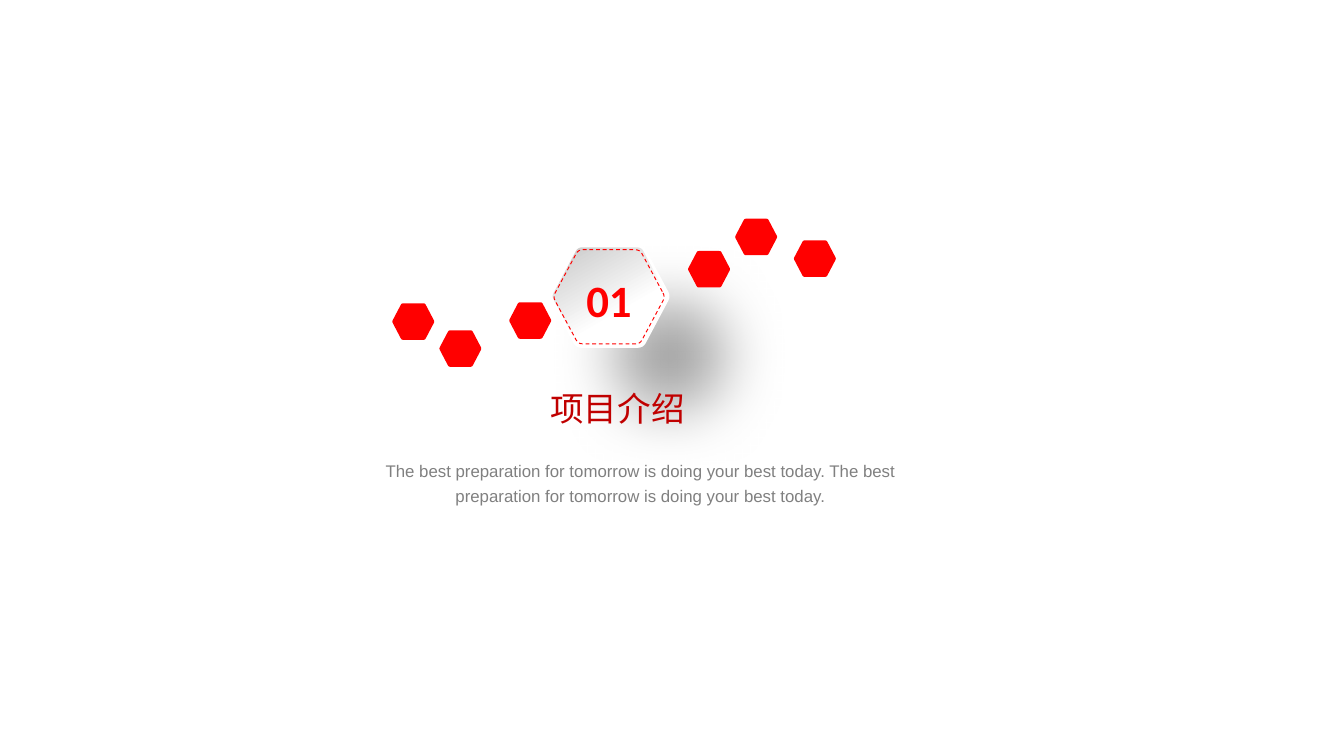
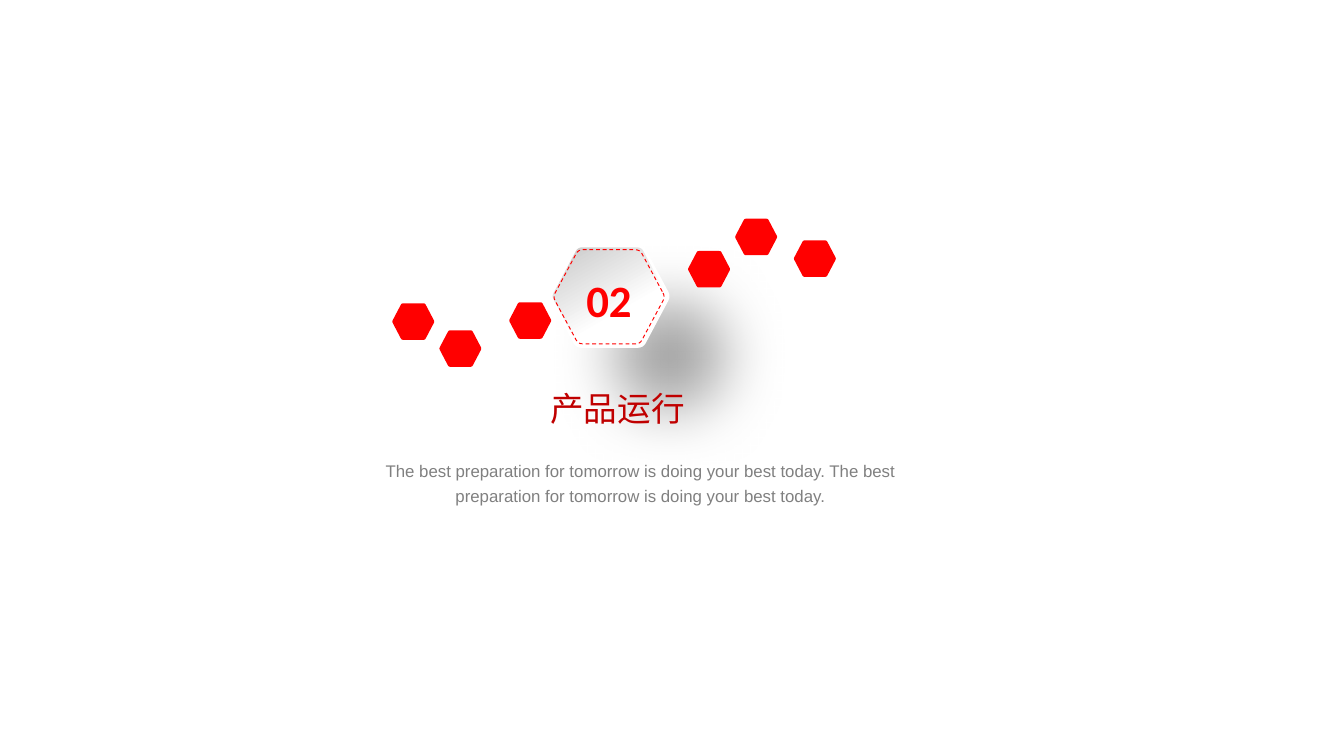
import pptx
import pptx.dml.color
import pptx.enum.dml
import pptx.enum.text
import pptx.util
from lxml import etree
from pptx.oxml.ns import qn

Cm, Pt = pptx.util.Cm, pptx.util.Pt

SECTIONS = [("01", "项目介绍"), ("02", "产品运行")]
MOTTO = " ".join(["The best preparation for tomorrow is doing your best today."] * 2)

COLORS = {"accent": "FF0000", "title": "C00000", "motto": "808080",
          "white": "FFFFFF", "silver": "C7C7C7", "shadow": "A6A6A6"}

# Centres, then sizes before rotation, in cm
DOT_CENTERS = [(7.81, 6.08), (8.7, 6.59), (10.02, 6.06),
               (13.4, 5.09), (14.29, 4.48), (15.4, 4.89)]
DOT_SIZE = (0.69, 0.79)
BADGE_CENTER, BADGE_SIZE = (11.52, 5.6), (1.9, 2.21)
RING_CENTER, RING_SIZE = (11.51, 5.61), (2.08, 1.78)

# Left, top, width, height in cm
TITLE_BOX = (9.09, 7.24, 5.16, 0.97)
MOTTO_BOX = (6.5, 8.51, 11.2, 1.63)
NUMBER_BOX = (10.67, 5.05, 1.68, 1.22)

HEXAGON = [(0, -1000), (1000, -550), (1000, 550), (0, 1000), (-1000, 550), (-1000, -550)]
CORNER = 0.08
CURVE_STEPS = 4
GRADIENT_STOPS = [(0, "white"), (36, "white"), (100, "silver")]


def rgb(name):
    return pptx.dml.color.RGBColor.from_string(COLORS[name])


def rounded_outline(vertices):
    """Replace each vertex by points on a short quadratic curve."""
    points = []
    for i, (x, y) in enumerate(vertices):
        before, after = vertices[i - 1], vertices[(i + 1) % len(vertices)]
        for step in range(CURVE_STEPS + 1):
            t = step / CURVE_STEPS
            back, ahead = CORNER * (1 - t) ** 2, CORNER * t ** 2
            points.append((x + back * (before[0] - x) + ahead * (after[0] - x),
                           y + back * (before[1] - y) + ahead * (after[1] - y)))
    return points


def add_hexagon(slide, center, size, rotation):
    """Add a rounded hexagon whose points lie along its longer side."""
    width, height = size
    vertices = HEXAGON if height > width else [(y, -x) for x, y in HEXAGON]
    start, *rest = rounded_outline(vertices)
    builder = slide.shapes.build_freeform(*start, scale=100)
    builder.add_line_segments(rest, close=True)
    hexagon = builder.convert_to_shape()
    hexagon.left, hexagon.top = Cm(center[0] - width / 2), Cm(center[1] - height / 2)
    hexagon.width, hexagon.height = Cm(width), Cm(height)
    hexagon.rotation = rotation
    hexagon.shadow.inherit = False
    return hexagon


def add_color(parent, name):
    etree.SubElement(parent, qn("a:srgbClr"), val=COLORS[name])


def style_badge(badge):
    badge.line.color.rgb = rgb("white")
    badge.line.width = Pt(1.5)
    properties = badge.element.spPr
    gradient = etree.Element(qn("a:gradFill"), rotWithShape="1")
    stops = etree.SubElement(gradient, qn("a:gsLst"))
    for position, color in GRADIENT_STOPS:
        add_color(etree.SubElement(stops, qn("a:gs"), pos=str(position * 1000)), color)
    etree.SubElement(gradient, qn("a:lin"), ang=str(150 * 60000), scaled="0")
    properties.find(qn("a:custGeom")).addnext(gradient)
    shadow = etree.SubElement(properties.find(qn("a:effectLst")), qn("a:outerShdw"),
                              blurRad=str(Pt(33)), dist=str(Pt(45)),
                              dir=str(45 * 60000), algn="ctr", rotWithShape="0")
    add_color(shadow, "shadow")


def add_badge(slide):
    badge = add_hexagon(slide, BADGE_CENTER, BADGE_SIZE, 90)
    style_badge(badge)
    ring = add_hexagon(slide, RING_CENTER, RING_SIZE, 180)
    ring.fill.background()
    ring.line.color.rgb = rgb("accent")
    ring.line.width = Pt(0.5)
    ring.line.dash_style = pptx.enum.dml.MSO_LINE.DASH
    slide.shapes.add_group_shape([badge, ring])


def add_dots(slide):
    for center in DOT_CENTERS:
        dot = add_hexagon(slide, center, DOT_SIZE, 90)
        dot.fill.solid()
        dot.fill.fore_color.rgb = rgb("accent")
        dot.line.fill.background()


def write(shape, text, font, size, color, bold=False, spacing=1.0):
    frame = shape.text_frame
    frame.text = text
    frame.word_wrap = True
    frame.auto_size = pptx.enum.text.MSO_AUTO_SIZE.SHAPE_TO_FIT_TEXT
    frame.vertical_anchor = pptx.enum.text.MSO_ANCHOR.TOP
    frame.margin_left = frame.margin_right = Cm(0.19)
    frame.margin_top = frame.margin_bottom = Cm(0.1)
    paragraph = frame.paragraphs[0]
    paragraph.alignment = pptx.enum.text.PP_ALIGN.CENTER
    paragraph.line_spacing = spacing
    paragraph.font.name = font
    paragraph.font.size = Pt(size)
    paragraph.font.bold = bold
    paragraph.font.color.rgb = rgb(color)
    latin = paragraph._p.pPr.find(qn("a:defRPr")).find(qn("a:latin"))
    latin.addnext(latin.makeelement(qn("a:ea"), {"typeface": font}))


def add_text(slide, box, *args, **kwargs):
    write(slide.shapes.add_textbox(*map(Cm, box)), *args, **kwargs)


def place_title(slide, text):
    title = slide.shapes.title
    title.left, title.top, title.width, title.height = map(Cm, TITLE_BOX)
    write(title, text, "Noto Sans CJK SC", 18, "title")
    slide.shapes.element.append(title.element)  # in front of the badge's shadow


def add_section(deck, number, name):
    slide = deck.slides.add_slide(deck.slide_layouts[5])
    add_badge(slide)
    add_dots(slide)
    place_title(slide, name)
    add_text(slide, MOTTO_BOX, MOTTO, "Arial", 9, "motto", spacing=1.25)
    add_text(slide, NUMBER_BOX, number, "Calibri", 24, "accent", bold=True)


def main():
    deck = pptx.Presentation()
    deck.slide_width, deck.slide_height = Cm(25.4), Cm(14.29)
    for number, name in SECTIONS:
        add_section(deck, number, name)
    deck.save("out.pptx")


if __name__ == "__main__":
    main()
